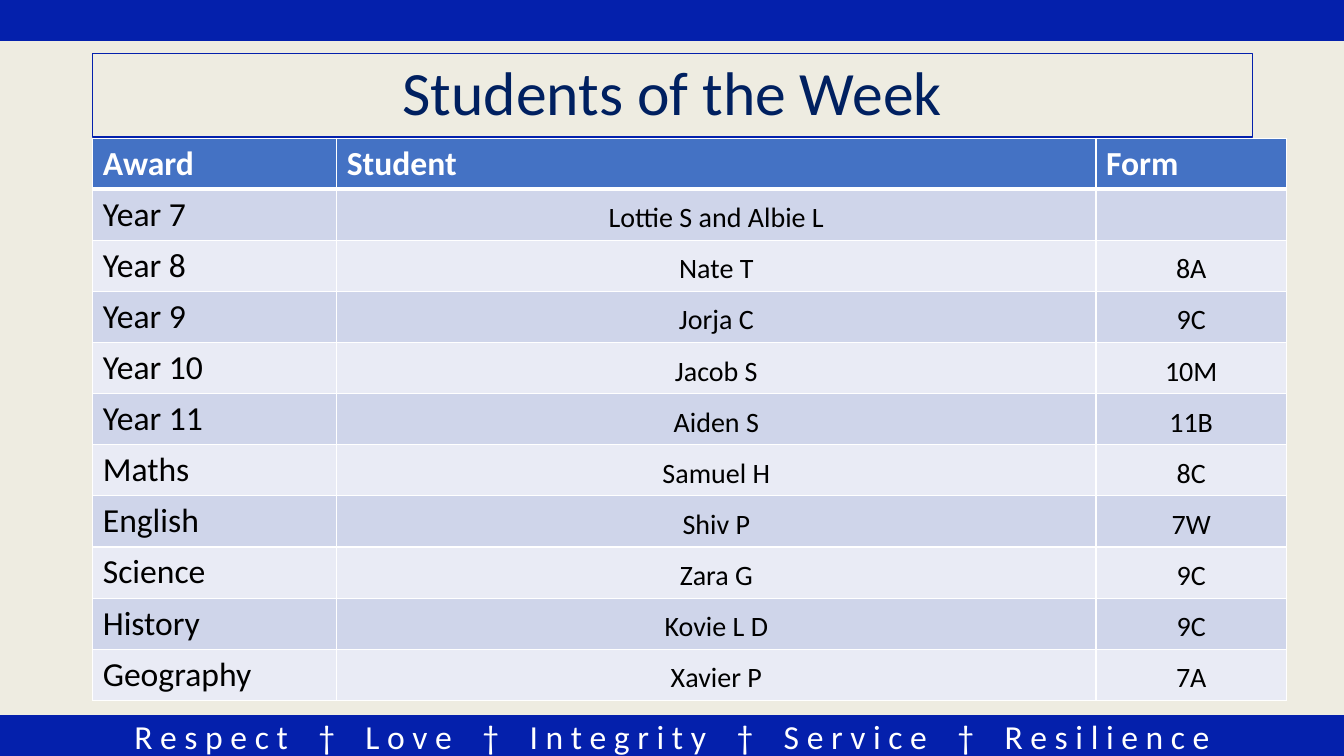
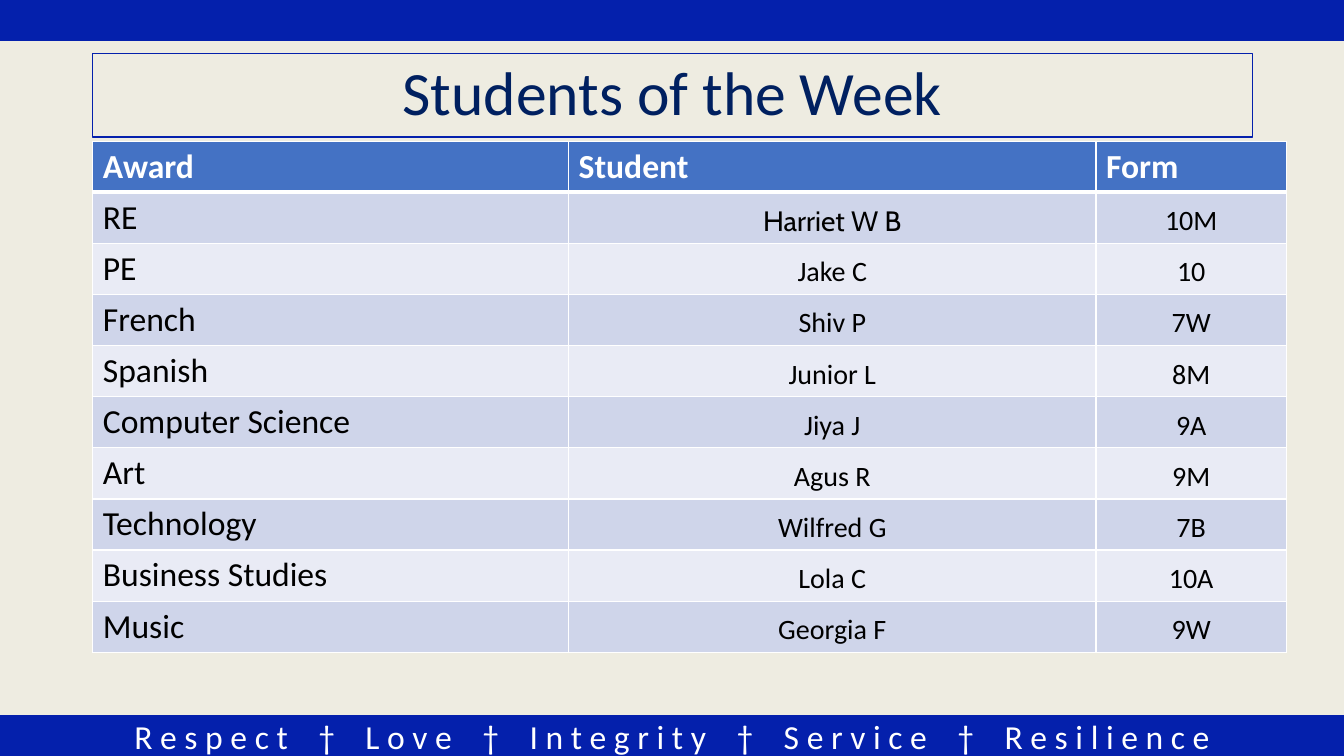
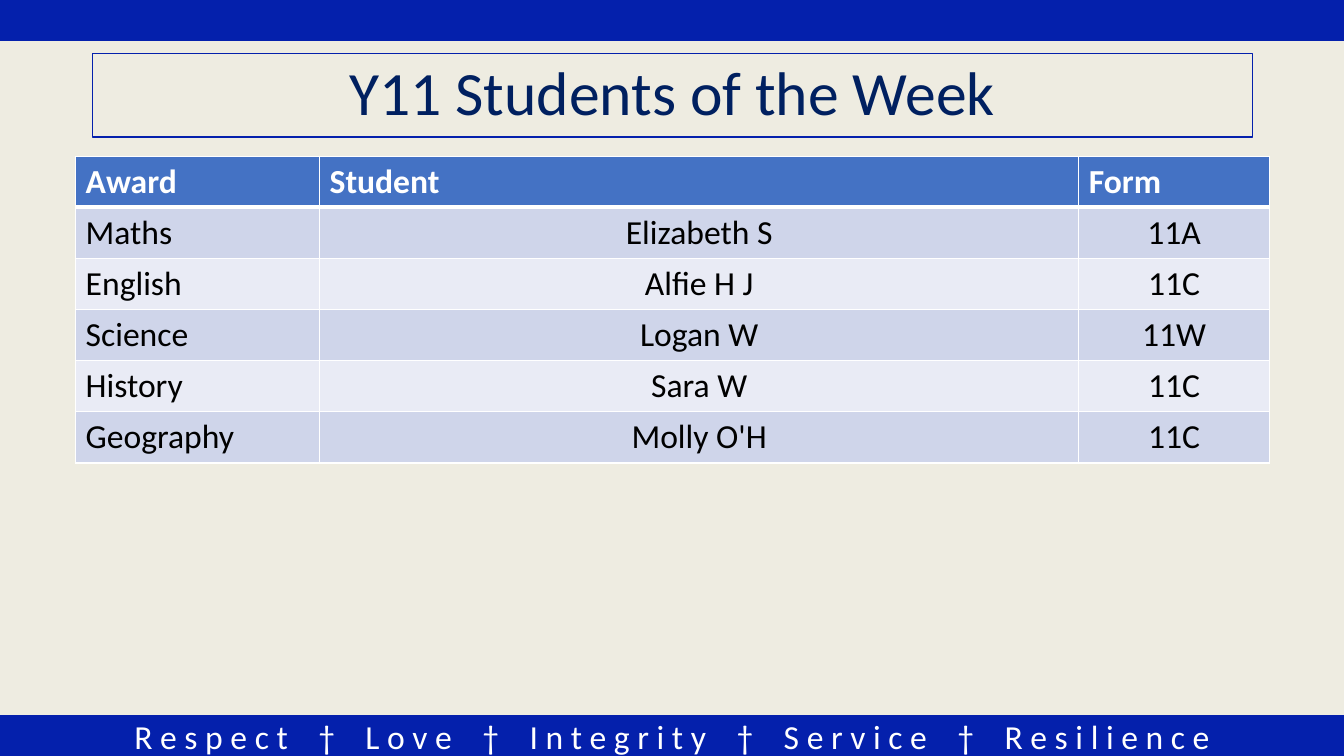
from lxml.etree import SubElement
from pptx import Presentation
from pptx.dml.color import RGBColor
from pptx.enum.shapes import MSO_SHAPE
from pptx.enum.text import MSO_ANCHOR, PP_ALIGN
from pptx.oxml.ns import qn
from pptx.util import Inches, Pt

BLUE = "0420AC"
NAVY = "002060"
WHITE = "FFFFFF"
BLACK = "000000"
CREAM = "EEECE1"
HEADER_FILL = "4472C4"
BAND_FILLS = ("CFD5EA", "E9EBF5")
FONT = "Calibri"
WIDTH, HEIGHT = 13.33, 7.5
BAND_HEIGHT = 0.4
ROW_HEIGHT = 0.5
TITLE_BOX = (0.92, 0.53, 11.5, 0.83)
VALUES = ("Respect", "Love", "Integrity", "Service", "Resilience")
HEADINGS = ("Award", "Student", "Form")
WIDE_STUDENT = (2.42, 7.53, 1.89)
WIDE_AWARD = (4.72, 5.23, 1.89)
FONT_EXCEPTIONS = {"Harriet W B": "Cabin"}

WEEK_AWARDS = (
    ("Year 7", "Lottie S and Albie L", ""),
    ("Year 8", "Nate T", "8A"),
    ("Year 9", "Jorja C", "9C"),
    ("Year 10", "Jacob S", "10M"),
    ("Year 11", "Aiden S", "11B"),
    ("Maths", "Samuel H", "8C"),
    ("English", "Shiv P", "7W"),
    ("Science", "Zara G", "9C"),
    ("History", "Kovie L D", "9C"),
    ("Geography", "Xavier P", "7A"),
)
SUBJECT_AWARDS = (
    ("RE", "Harriet W B", "10M"),
    ("PE", "Jake C", "10"),
    ("French", "Shiv P", "7W"),
    ("Spanish", "Junior L", "8M"),
    ("Computer Science", "Jiya J", "9A"),
    ("Art", "Agus R", "9M"),
    ("Technology", "Wilfred G", "7B"),
    ("Business Studies", "Lola C", "10A"),
    ("Music", "Georgia F", "9W"),
)
YEAR_11_AWARDS = (
    ("Maths", "Elizabeth S", "11A"),
    ("English", "Alfie H J", "11C"),
    ("Science", "Logan W", "11W"),
    ("History", "Sara W", "11C"),
    ("Geography", "Molly O'H", "11C"),
)


def color(value):
    return RGBColor.from_string(value)


def style(paragraph, size, text_color, align=PP_ALIGN.LEFT, bold=False, name=FONT):
    paragraph.alignment = align
    font = paragraph.font
    font.name, font.size, font.bold = name, Pt(size), bold
    font.color.rgb = color(text_color)


def add_box(slide, box, fill=None, line_width=1):
    shape = slide.shapes.add_shape(MSO_SHAPE.RECTANGLE, *map(Inches, box))
    shape.shadow.inherit = False
    if fill:
        shape.fill.solid()
        shape.fill.fore_color.rgb = color(fill)
    else:
        shape.fill.background()
    shape.line.color.rgb = color(BLUE)
    shape.line.width = Pt(line_width)
    shape.text_frame.word_wrap = True
    shape.text_frame.vertical_anchor = MSO_ANCHOR.MIDDLE
    return shape


def add_run(paragraph, text, spacing=0):
    run = paragraph.add_run()
    run.text = text
    if spacing:
        run.font._element.set("spc", str(spacing))


def add_footer(slide, box):
    paragraph = add_box(slide, box, BLUE).text_frame.paragraphs[0]
    style(paragraph, 24, WHITE, PP_ALIGN.CENTER)
    for index, value in enumerate(VALUES):
        if index:
            add_run(paragraph, " ", 1630)
            add_run(paragraph, "†")
            add_run(paragraph, " ", 1630)
        add_run(paragraph, " ".join(value))


def add_title(slide, box, text):
    paragraph = add_box(slide, box, line_width=0.75).text_frame.paragraphs[0]
    paragraph.text = text
    paragraph.line_spacing = 0.9
    style(paragraph, 44, NAVY, PP_ALIGN.CENTER)


def add_border(cell, side, width):
    properties = cell._tc.get_or_add_tcPr()
    line = SubElement(properties, qn(f"a:ln{side}"), w=str(Pt(width)))
    fill = SubElement(line, qn("a:solidFill"))
    SubElement(fill, qn("a:srgbClr"), val=WHITE)


def format_cell(cell, row, column, text, entry_size):
    widths = {"L": 1, "R": 1, "T": 3 if row == 1 else 1, "B": 3 if row == 0 else 1}
    for side, width in widths.items():
        add_border(cell, side, width)
    cell.fill.solid()
    cell.fill.fore_color.rgb = color(BAND_FILLS[(row - 1) % 2] if row else HEADER_FILL)
    cell.text = text
    paragraph = cell.text_frame.paragraphs[0]
    if row == 0:
        style(paragraph, 24, WHITE, bold=True)
    elif column == 0:
        style(paragraph, 24, BLACK)
    else:
        cell.vertical_anchor = MSO_ANCHOR.BOTTOM
        cell.margin_left = cell.margin_right = cell.margin_top = Inches(0.01)
        cell.margin_bottom = Inches(0.05)
        name = FONT_EXCEPTIONS.get(text, FONT)
        style(paragraph, entry_size, BLACK, PP_ALIGN.CENTER, name=name)


def add_awards(slide, left, top, column_widths, awards, entry_size):
    rows = (HEADINGS, *awards)
    box = (left, top, sum(column_widths), ROW_HEIGHT * len(rows))
    frame = slide.shapes.add_table(len(rows), len(HEADINGS), *map(Inches, box))
    table = frame.table
    table.horz_banding = False
    for column, width in zip(table.columns, column_widths):
        column.width = Inches(width)
    for row, texts in enumerate(rows):
        for column, text in enumerate(texts):
            format_cell(table.cell(row, column), row, column, text, entry_size)


def add_awards_slide(presentation, title, *awards_table):
    slide = presentation.slides.add_slide(presentation.slide_layouts[6])
    add_footer(slide, (0, HEIGHT - BAND_HEIGHT, WIDTH, BAND_HEIGHT))
    add_box(slide, (0, 0, WIDTH, BAND_HEIGHT), BLUE)
    add_title(slide, TITLE_BOX, title)
    add_awards(slide, *awards_table)


def main():
    presentation = Presentation()
    presentation.slide_width = Inches(WIDTH)
    presentation.slide_height = Inches(HEIGHT)
    background = presentation.slide_master.background.fill
    background.solid()
    background.fore_color.rgb = color(CREAM)
    title = "Students of the Week"
    add_awards_slide(presentation, title, 0.92, 1.37, WIDE_STUDENT, WEEK_AWARDS, 20)
    add_awards_slide(presentation, title, 0.92, 1.4, WIDE_AWARD, SUBJECT_AWARDS, 20)
    add_awards_slide(presentation, f"Y11 {title}", 0.75, 1.55, WIDE_STUDENT, YEAR_11_AWARDS, 24)
    presentation.save("out.pptx")


if __name__ == "__main__":
    main()
